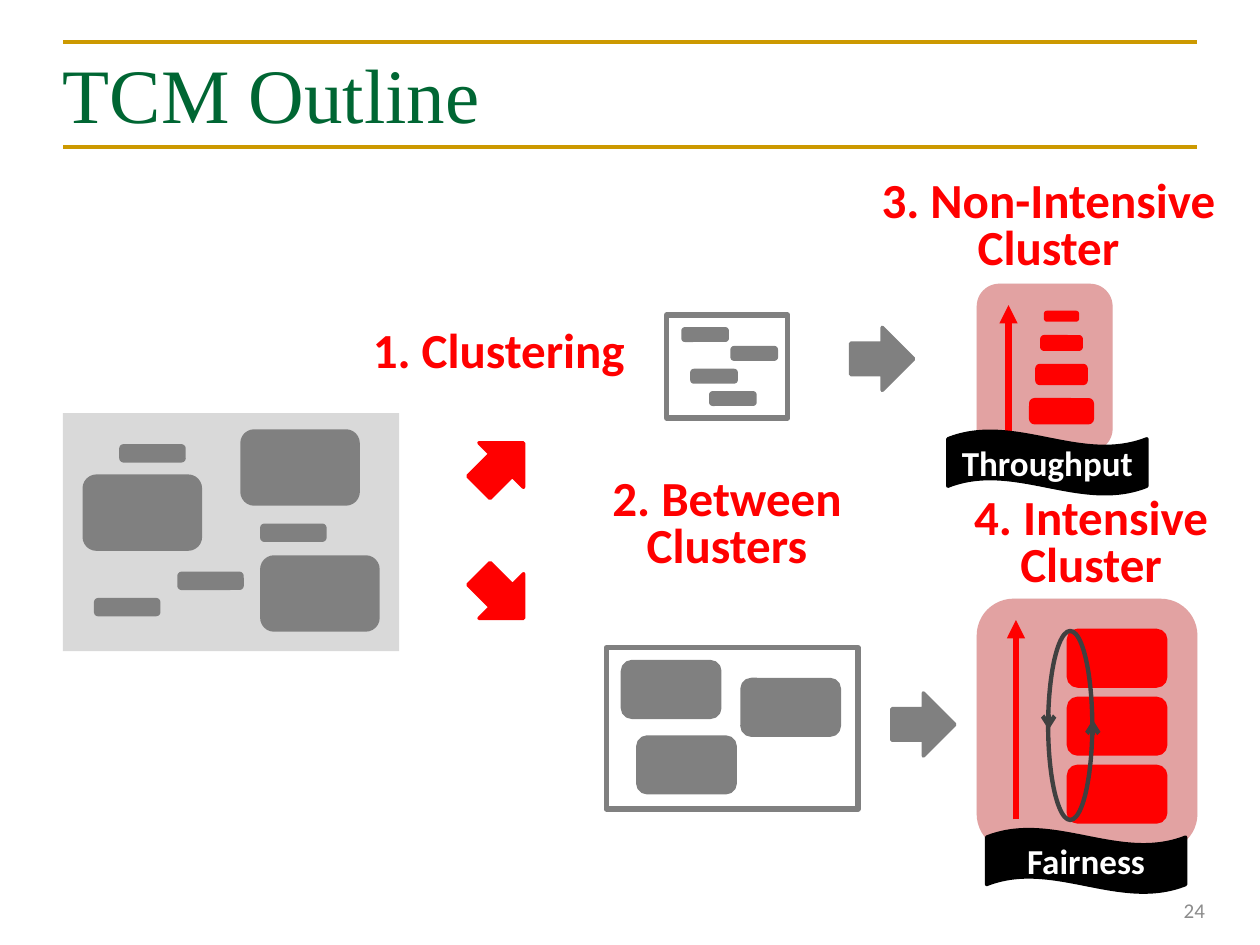
import dataclasses

import pptx
import pptx.dml.color
import pptx.enum.shapes
import pptx.enum.text
import pptx.oxml
import pptx.oxml.ns
import pptx.util
from pptx.util import Cm

SHAPE = pptx.enum.shapes.MSO_SHAPE
ALIGN = pptx.enum.text.PP_ALIGN
ANCHOR = pptx.enum.text.MSO_ANCHOR


@dataclasses.dataclass(frozen=True)
class Theme:
    gold: str = "CC9900"
    green: str = "006633"
    red: str = "FF0000"
    gray: str = "808080"
    light: str = "D9D9D9"
    dark: str = "404040"
    black: str = "000000"
    white: str = "FFFFFF"
    number: str = "8C8C8C"
    serif: str = "Times New Roman"
    sans: str = "Calibri"
    title_size: int = 44
    label_size: int = 28
    banner_size: int = 20
    number_size: int = 12


THEME = Theme()


def rgb(color):
    return pptx.dml.color.RGBColor.from_string(color)


def add_element(parent, tag, **attributes):
    element = pptx.oxml.parse_xml(f"<a:{tag} {pptx.oxml.ns.nsdecls('a')}/>")
    for name, value in attributes.items():
        element.set(name, value)
    parent.append(element)


def add_figure(shapes, kind, box, fill=None, line=None, width=2, opacity=None):
    """Add a preset shape; opacity is a percentage of the fill."""
    shape = shapes.add_shape(kind, *map(Cm, box))
    shape.shadow.inherit = False
    if fill:
        shape.fill.solid()
        shape.fill.fore_color.rgb = rgb(fill)
        if opacity:
            color = shape.fill._xPr.find(".//" + pptx.oxml.ns.qn("a:srgbClr"))
            add_element(color, "alpha", val=str(opacity * 1000))
    else:
        shape.fill.background()
    if line:
        shape.line.color.rgb = rgb(line)
        shape.line.width = pptx.util.Pt(width)
    else:
        shape.line.fill.background()
    return shape


def add_line(shapes, start, end, color, width, arrowhead=None):
    straight = pptx.enum.shapes.MSO_CONNECTOR.STRAIGHT
    connector = shapes.add_connector(straight, *map(Cm, (*start, *end)))
    connector.line.color.rgb = rgb(color)
    connector.line.width = pptx.util.Pt(width)
    if arrowhead:
        add_element(connector.line._get_or_add_ln(), "tailEnd", type=arrowhead)
    add_element(connector._element.spPr, "effectLst")


def write(shape, text, size, color, font=THEME.sans, bold=False,
          align=ALIGN.CENTER, spacing=None):
    frame = shape.text_frame
    frame.text = text
    frame.vertical_anchor = ANCHOR.MIDDLE
    for paragraph in frame.paragraphs:
        paragraph.alignment = align
        paragraph.line_spacing = spacing
        for run in paragraph.runs:
            run.font.size = pptx.util.Pt(size)
            run.font.name = font
            run.font.bold = bold
            run.font.color.rgb = rgb(color)


def add_title(shapes, box, text):
    left, top, width, height = box
    for y in (top + 0.09, top + height):
        add_line(shapes, (left, y), (left + width, y), THEME.gold, 2.25)
    title = shapes.add_textbox(*map(Cm, box))
    title.text_frame.word_wrap = True
    title.text_frame.margin_left = title.text_frame.margin_right = 0
    write(title, text, THEME.title_size, THEME.green, THEME.serif, align=ALIGN.LEFT)


def add_label(shapes, box, text):
    label = shapes.add_textbox(*map(Cm, box))
    write(label, text, THEME.label_size, THEME.red, bold=True, spacing=0.8)
    label.text_frame.vertical_anchor = ANCHOR.TOP
    label.text_frame.word_wrap = False
    label.text_frame.auto_size = pptx.enum.text.MSO_AUTO_SIZE.SHAPE_TO_FIT_TEXT


def add_slide_number(shapes, box, text):
    number = shapes.add_textbox(*map(Cm, box))
    number.text_frame.word_wrap = True
    write(number, text, THEME.number_size, THEME.number, align=ALIGN.RIGHT)


def add_threads(shapes, box, size, offsets, color=THEME.gray):
    """Add equal rounded blocks at offsets from the corner of the box."""
    for x, y in offsets:
        add_figure(shapes, SHAPE.ROUNDED_RECTANGLE,
                   (box[0] + x, box[1] + y, *size), color, color)


def add_thread_pool(shapes, box):
    add_figure(shapes, SHAPE.RECTANGLE, box, THEME.light)
    add_threads(shapes, box, (1.27, 0.3),
                [(2.34, 3.23), (1.17, 0.66), (4.01, 2.26), (0.66, 3.76)])
    add_threads(shapes, box, (2.34, 1.47), [(4.01, 2.9), (0.43, 1.27), (3.61, 0.36)])


def add_cluster(shapes, box, size, offsets):
    group = shapes.add_group_shape()
    add_figure(group.shapes, SHAPE.RECTANGLE, box, line=THEME.gray, width=3)
    add_threads(group.shapes, box, size, offsets)


def add_block_arrow(shapes, corner, color, rotation=0):
    arrow = add_figure(shapes, SHAPE.RIGHT_ARROW, (*corner, 1.27, 1.27), color, color)
    arrow.rotation = rotation


def add_priority_panel(shapes, box, axis_x, axis_bottom):
    """Add a tinted panel with an upward priority axis."""
    left, top = box[:2]
    add_figure(shapes, SHAPE.ROUNDED_RECTANGLE, box, THEME.light)
    add_figure(shapes, SHAPE.ROUNDED_RECTANGLE, box, THEME.red, opacity=25)
    add_line(shapes, (left + axis_x, top + axis_bottom), (left + axis_x, top + 0.43),
             THEME.red, 3.5, "triangle")


def add_banner(shapes, corner, text):
    banner = add_figure(shapes, SHAPE.WAVE, (*corner, 4.01, 1.27), THEME.black, THEME.black)
    write(banner, text, THEME.banner_size, THEME.white, bold=True)


def add_throughput_panel(shapes, box):
    left, top = box[:2]
    add_priority_panel(shapes, box, 0.64, 2.97)
    ranks = [(0.58, 0.64, 0.15), (1.07, 0.79, 0.25), (1.65, 0.99, 0.36), (2.34, 1.24, 0.46)]
    for y, width, height in ranks:
        add_threads(shapes, box, (width, height), [(1.71 - width / 2, y)], THEME.red)
    add_banner(shapes, (left - 0.58, top + 2.97), "Throughput")


def add_fairness_panel(shapes, box):
    left, top = box[:2]
    add_priority_panel(shapes, box, 0.79, 4.45)
    add_threads(shapes, box, (1.96, 1.12),
                [(1.85, 0.64 + 1.37 * rank) for rank in range(3)], THEME.red)
    add_figure(shapes, SHAPE.OVAL, (left + 1.44, top + 0.65, 0.89, 3.81),
               line=THEME.dark, width=2.5)
    for x, start, end in [(1.45, 2.44, 2.64), (2.34, 2.64, 2.44)]:
        add_line(shapes, (left + x, top + start), (left + x, top + end),
                 THEME.dark, 2.5, "arrow")
    add_banner(shapes, (left + 0.2, top + 4.65), "Fairness")


def main():
    presentation = pptx.Presentation()
    presentation.slide_width, presentation.slide_height = Cm(25.4), Cm(19.05)
    shapes = presentation.slides.add_slide(presentation.slide_layouts[6]).shapes

    add_title(shapes, (1.27, 0.76, 22.86, 2.21), "TCM Outline")
    add_slide_number(shapes, (18.62, 17.83, 5.92, 1.02), "24")
    add_thread_pool(shapes, (1.27, 8.33, 6.78, 4.8))
    add_cluster(shapes, (13.44, 6.35, 2.44, 2.08), (0.89, 0.23),
                [(0.33, 0.28), (0.51, 1.12), (1.32, 0.66), (0.89, 1.57)])
    add_cluster(shapes, (12.22, 13.06, 5.08, 3.25), (1.96, 1.12),
                [(0.33, 0.28), (2.74, 0.64), (0.64, 1.8)])
    add_block_arrow(shapes, (9.47, 8.74), THEME.red, 315)
    add_block_arrow(shapes, (9.47, 11.38), THEME.red, 45)
    add_block_arrow(shapes, (17.15, 6.6), THEME.gray)
    add_block_arrow(shapes, (17.98, 13.97), THEME.gray)
    add_label(shapes, (7.21, 6.55, 5.69, 1.27), "1. Clustering")
    add_label(shapes, (12.04, 9.53, 5.23, 2.21), "2. Between\nClusters")
    add_label(shapes, (17.45, 3.53, 7.37, 2.21), "3. Non-Intensive\nCluster")
    add_label(shapes, (19.33, 9.91, 5.33, 2.21), "4. Intensive\nCluster")
    add_throughput_panel(shapes, (19.69, 5.72, 2.74, 3.38))
    add_fairness_panel(shapes, (19.69, 12.07, 4.45, 5.08))
    presentation.save("out.pptx")


if __name__ == "__main__":
    main()
